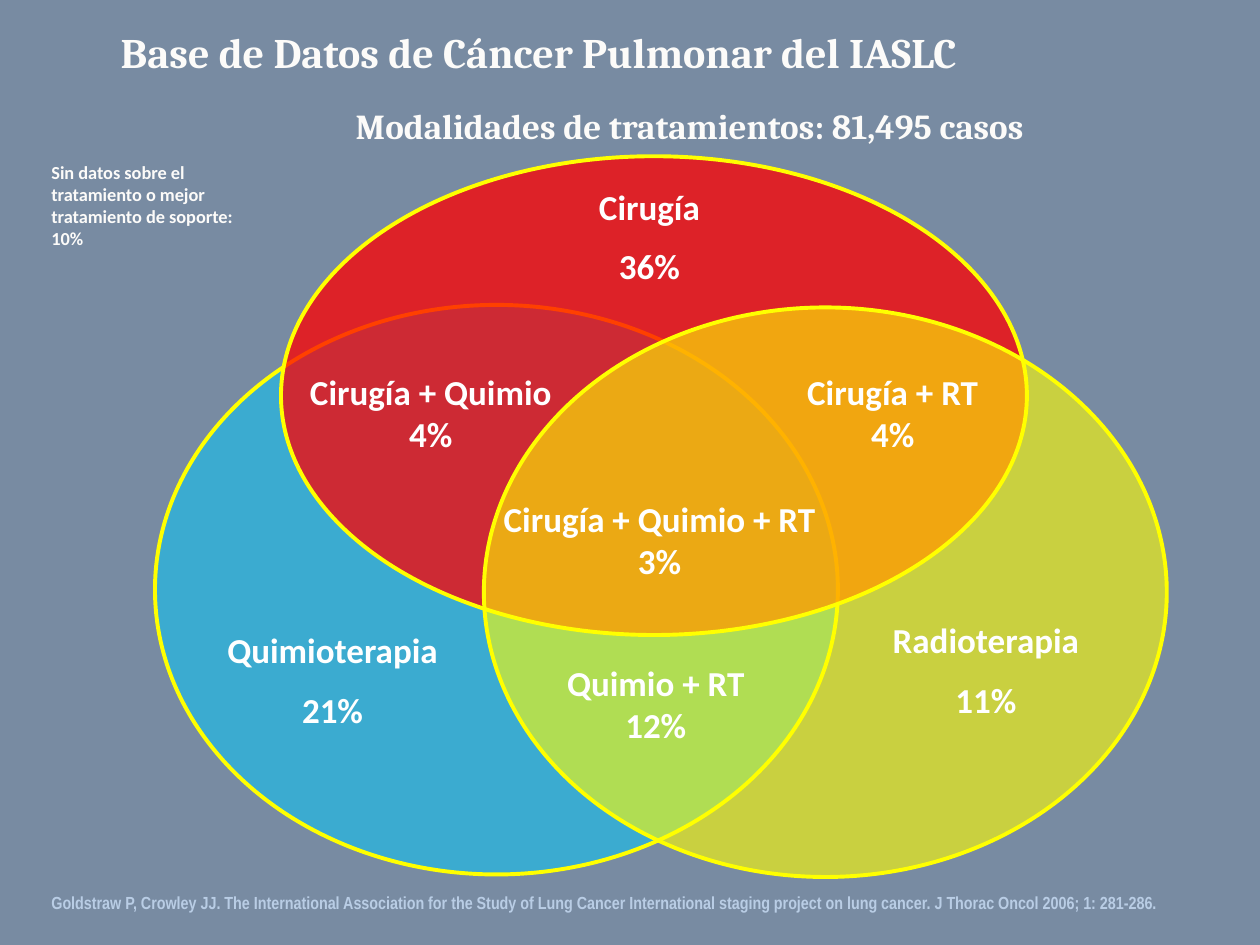
from dataclasses import dataclass

from lxml.etree import SubElement as Sub
from pptx import Presentation as Deck
from pptx.dml.color import RGBColor as RGB
from pptx.enum.shapes import MSO_SHAPE as Form
from pptx.enum.text import PP_ALIGN as Align
from pptx.oxml.ns import qn
from pptx.util import Inches, Pt

CELL = 0.1  # the slide is a grid of 100 columns by 75 rows
COLS, ROWS = 100, 75


@dataclass(frozen=True)
class Theme:
    back: str = "788BA2"
    edge: str = "FFFF00"
    blue: str = "00CCFF"
    red: str = "FF0000"
    gold: str = "FFFF00"
    edge_pt: float = 2.25
    gap_pt: float = 10
    title = dict(name="Cambria", size=24, color="FCFBF9", bold=True)
    sub = dict(title, size=20)
    label = dict(name="Calibri", size=20, color="FFFFFF", bold=True)
    note = dict(label, size=10.5, color="FCFBF9")
    cite = dict(name="Arial Narrow", size=10, color="B9CDE5", bold=True)


@dataclass(frozen=True)
class Box:
    x: float
    y: float
    w: float
    h: float

    def inner(self, x, y, w, h):
        return Box(self.x + x, self.y + y, w, h)

    def place(self):
        return [Inches(n * CELL) for n in (self.x, self.y, self.w, self.h)]


THEME = Theme()


def style(font, look):
    for key, val in look.items():
        if key == "color":
            font.color.rgb = RGB.from_string(val)
        else:
            setattr(font, key, Pt(val) if key == "size" else val)


def write(slide, box, lines, look, align=Align.LEFT, gap=0):
    frame = slide.shapes.add_textbox(*box.place()).text_frame
    frame.word_wrap = True
    for i, line in enumerate(lines):
        para = frame.paragraphs[0] if i == 0 else frame.add_paragraph()
        para.alignment = align
        if i:
            para.space_before = Pt(gap)
        run = para.add_run()
        run.text = line
        style(run.font, look)


def oval(slide, box, color, alpha):
    shape = slide.shapes.add_shape(Form.OVAL, *box.place())
    shape.shadow.inherit = False
    shape.fill.solid()
    shape.fill.fore_color.rgb = RGB.from_string(color)
    solid = shape.element.spPr.find(qn("a:solidFill"))
    tint = solid.find(qn("a:srgbClr"))
    Sub(tint, qn("a:alpha")).set("val", str(alpha * 1000))
    shape.line.color.rgb = RGB.from_string(THEME.edge)
    shape.line.width = Pt(THEME.edge_pt)


def head(slide, box):
    write(slide, box.inner(0, 0, 84.4, 5.1),
          ["Base de Datos de Cáncer Pulmonar del IASLC"], THEME.title)
    write(slide, box.inner(14.1, 6.2, 64.1, 4.4),
          ["Modalidades de tratamientos: 81,495 casos"], THEME.sub, Align.CENTER)


def venn(slide, box):
    # Three sets, from back to front
    wide, tall = 54.2, 45.2
    oval(slide, box.inner(0, 11.8, wide, tall), THEME.blue, 50)
    oval(slide, box.inner(10, 0, 59.2, 38), THEME.red, 75)
    oval(slide, box.inner(26.1, 12, wide, tall), THEME.gold, 60)

    # Single treatments, name and share set apart
    one = [(25.1, 1.8, 28.3, "Cirugía", "36%"),
           (-0.9, 37, 30, "Quimioterapia", "21%"),
           (55, 36.2, 21.9, "Radioterapia", "11%")]
    # Combined treatments, lines set close
    mix = [(10.9, 16.5, 22, "Cirugía + Quimio", "4%"),
           (49.5, 16.5, 18.1, "Cirugía + RT", "4%"),
           (29, 39.6, 21.5, "Quimio + RT", "12%"),
           (25.1, 26.6, 29.9, "Cirugía + Quimio + RT 3%")]
    for group, high, gap in ((one, 10.1, THEME.gap_pt), (mix, 8.4, 0)):
        for x, y, w, *lines in group:
            write(slide, box.inner(x, y, w, high), lines, THEME.label,
                  Align.CENTER, gap)


def notes(slide, box):
    write(slide, box.inner(0, 0, 18, 8.8),
          ["Sin datos sobre el tratamiento o mejor tratamiento de soporte: 10%"],
          THEME.note)
    write(slide, box.inner(0, 58, 93, 2.7),
          ["Goldstraw P, Crowley JJ. The International Association for the Study "
           "of Lung Cancer International staging project on lung cancer. "
           "J Thorac Oncol 2006; 1: 281-286."], THEME.cite)


def main():
    deck = Deck()
    deck.slide_width, deck.slide_height = Inches(COLS * CELL), Inches(ROWS * CELL)
    slide = deck.slides.add_slide(deck.slide_layouts[6])
    fill = slide.background.fill
    fill.solid()
    fill.fore_color.rgb = RGB.from_string(THEME.back)

    page = Box(0, 0, COLS, ROWS)
    head(slide, page.inner(8.6, 1.6, 84.4, 10.6))
    venn(slide, page.inner(12.3, 12.4, 80.3, 57.2))
    notes(slide, page.inner(3.1, 12.3, 93, 60.7))
    deck.save("out.pptx")


if __name__ == "__main__":
    main()
